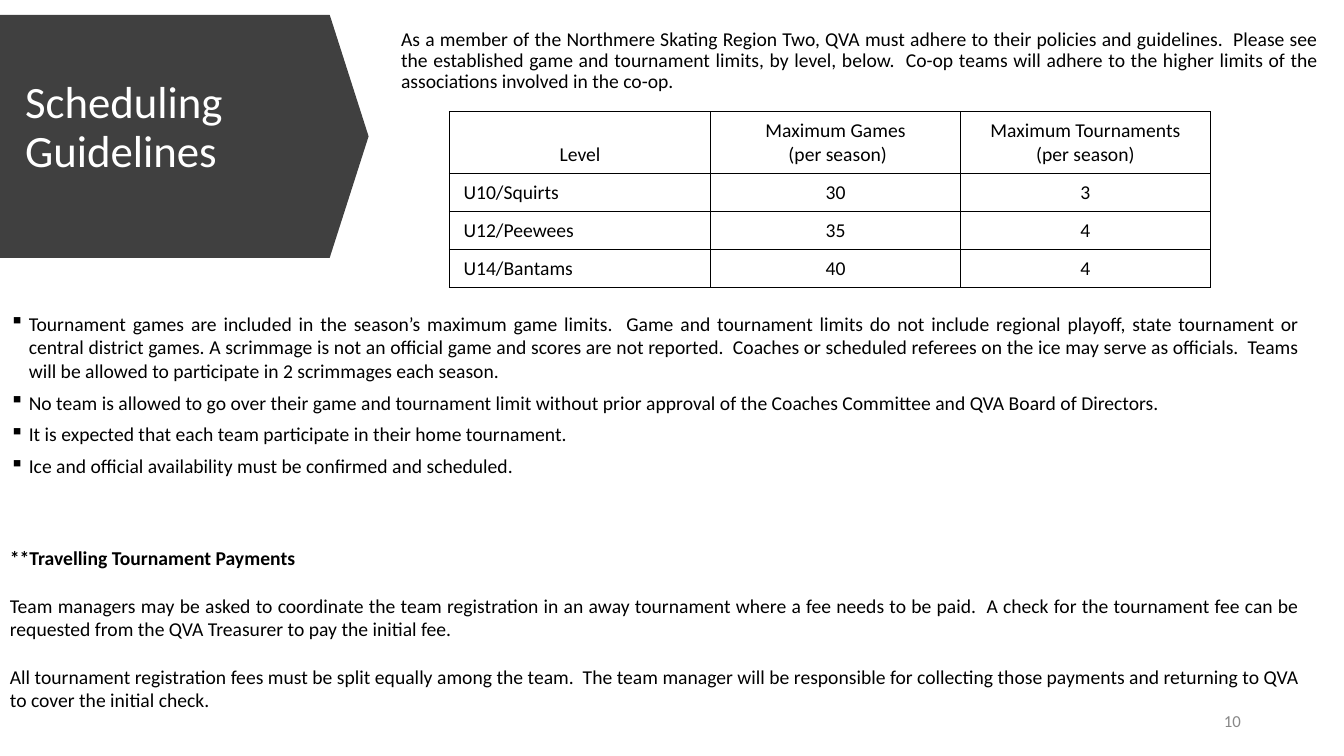
from dataclasses import dataclass

from lxml.etree import SubElement
from pptx import Presentation
from pptx.dml.color import RGBColor as Rgb
from pptx.enum.shapes import MSO_SHAPE as Form
from pptx.enum.text import MSO_ANCHOR as Anchor, MSO_AUTO_SIZE as Fit, PP_ALIGN as Align
from pptx.oxml import parse_xml
from pptx.oxml.ns import nsdecls, qn
from pptx.slide import Slide
from pptx.table import _Cell as Cell
from pptx.text.text import TextFrame, _Paragraph as Para
from pptx.util import Pt


@dataclass(frozen=True)
class Theme:
    font: str = "Calibri"
    dark: str = "404040"
    black: str = "000000"
    white: str = "FFFFFF"
    gray: str = "888888"
    title: float = 32
    body: float = 14
    small: float = 12
    rule: float = 1


THEME = Theme()


@dataclass(frozen=True)
class Line:
    text: str
    size: float = THEME.body
    color: str = THEME.black
    bold: bool = False
    align: Align = Align.JUSTIFY
    pitch: float | None = None
    before: float = 0
    after: float = 0
    bullet: str = ""


@dataclass(frozen=True)
class Box:
    left: float
    top: float
    width: float
    height: float
    lines: tuple[Line, ...]
    anchor: Anchor = Anchor.TOP
    fit: Fit = Fit.NONE


INDENT = 13.5
GAP = 17.1
POINTS = (
    "Tournament games are included in the season’s maximum game limits.  Game and "
    "tournament limits do not include regional playoff, state tournament or central "
    "district games. A scrimmage is not an official game and scores are not reported.  "
    "Coaches or scheduled referees on the ice may serve as officials.  Teams will be "
    "allowed to participate in 2 scrimmages each season.",
    "No team is allowed to go over their game and tournament limit without prior "
    "approval of the Coaches Committee and QVA Board of Directors.",
    "It is expected that each team participate in their home tournament.",
    "Ice and official availability must be confirmed and scheduled.",
)
BOXES = (
    Box(10.8, 21.6, 210.2, 140.4,
        (Line("Scheduling Guidelines", THEME.title, THEME.white,
              align=Align.LEFT, pitch=0.9),), Anchor.MIDDLE),
    Box(279.4, 17.3, 669.6, 79.9, (Line(
        "As a member of the Northmere Skating Region Two, QVA must adhere to their "
        "policies and guidelines.  Please see the established game and tournament "
        "limits, by level, below.  Co-op teams will adhere to the higher limits of the "
        "associations involved in the co-op.", pitch=0.9),)),
    Box(812.9, 500.4, 80.6, 28.8,
        (Line("10", THEME.small, THEME.gray, align=Align.RIGHT),), Anchor.MIDDLE),
    Box(0, 218.9, 936, 133.2,
        tuple(Line(text, after=6, bullet="▪") for text in POINTS), fit=Fit.SHAPE_TO_FIT_TEXT),
    Box(0, 386.6, 936, 126, (
        Line("**Travelling Tournament Payments", bold=True),
        Line("Team managers may be asked to coordinate the team registration in an away "
             "tournament where a fee needs to be paid.  A check for the tournament fee "
             "can be requested from the QVA Treasurer to pay the initial fee.", before=GAP),
        Line("All tournament registration fees must be split equally among the team.  "
             "The team manager will be responsible for collecting those payments and "
             "returning to QVA to cover the initial check.", before=GAP),
    ), fit=Fit.SHAPE_TO_FIT_TEXT),
)

LIMITS = (
    (("Level",), ("Maximum Games", " (per season)"), ("Maximum Tournaments (per season)",)),
    (("U10/Squirts",), ("30",), ("3",)),
    (("U12/Peewees",), ("35",), ("4",)),
    (("U14/Bantams",), ("40",), ("4",)),
)
WIDTHS = (186.5, 178.5, 178.5)
HEIGHTS = (44.3, 27.1, 27.1, 27.1)


def add_bullet(para: Para, mark: str) -> None:
    props = para._p.get_or_add_pPr()
    props.set("marL", str(Pt(INDENT)))
    props.set("indent", str(-Pt(INDENT)))
    tint = SubElement(props, qn("a:buClr"))
    SubElement(tint, qn("a:srgbClr"), val=THEME.black)
    SubElement(props, qn("a:buChar"), char=mark)


def write(frame: TextFrame, lines: tuple[Line, ...]) -> None:
    for spot, line in enumerate(lines):
        para = frame.add_paragraph() if spot else frame.paragraphs[0]
        para.alignment = line.align
        para.line_spacing = line.pitch
        para.space_before = Pt(line.before)
        para.space_after = Pt(line.after)
        if line.bullet:
            add_bullet(para, line.bullet)
        run = para.add_run()
        run.text = line.text
        font = run.font
        font.name, font.size, font.bold = THEME.font, Pt(line.size), line.bold
        font.color.rgb = Rgb.from_string(line.color)


def pad(part: TextFrame | Cell, side: float, edge: float) -> None:
    part.margin_left = part.margin_right = Pt(side)
    part.margin_top = part.margin_bottom = Pt(edge)


def add_box(slide: Slide, box: Box) -> None:
    place = (Pt(n) for n in (box.left, box.top, box.width, box.height))
    frame = slide.shapes.add_textbox(*place).text_frame
    frame.word_wrap = True
    frame.auto_size = box.fit
    frame.vertical_anchor = box.anchor
    pad(frame, 7.2, 3.6)
    write(frame, box.lines)


def add_arrow(slide: Slide) -> None:
    arrow = slide.shapes.add_shape(Form.DOWN_ARROW, Pt(44.8), Pt(-34.4), Pt(173.5), Pt(263.5))
    arrow.rotation = 270
    arrow.adjustments[0], arrow.adjustments[1] = 1, 0.16
    arrow.shadow.inherit = False
    arrow.fill.solid()
    arrow.fill.fore_color.rgb = Rgb.from_string(THEME.dark)
    arrow.line.fill.background()


def frame_cell(cell: Cell) -> None:
    """Draw a rule on all four sides of the cell."""
    props = cell._tc.get_or_add_tcPr()
    for spot, side in enumerate(("lnL", "lnR", "lnT", "lnB")):
        props.insert(spot, parse_xml(
            f'<a:{side} {nsdecls("a")} w="{Pt(THEME.rule)}"><a:solidFill>'
            f'<a:srgbClr val="{THEME.black}"/></a:solidFill></a:{side}>'))


def add_limits(slide: Slide) -> None:
    table = slide.shapes.add_table(len(HEIGHTS), len(WIDTHS), Pt(321.1), Pt(79.9),
                                   Pt(sum(WIDTHS)), Pt(sum(HEIGHTS))).table
    table.first_row = table.horz_banding = False
    for col, width in zip(table.columns, WIDTHS):
        col.width = Pt(width)
    for r, (row, height) in enumerate(zip(LIMITS, HEIGHTS)):
        table.rows[r].height = Pt(height)
        for c, texts in enumerate(row):
            cell = table.cell(r, c)
            cell.fill.solid()
            cell.fill.fore_color.rgb = Rgb.from_string(THEME.white)
            cell.vertical_anchor = Anchor.TOP if r else Anchor.BOTTOM
            pad(cell, 10, 5)
            align = Align.LEFT if r and not c else Align.CENTER
            write(cell.text_frame, tuple(Line(text, align=align) for text in texts))
            frame_cell(cell)


def main() -> None:
    deck = Presentation()
    deck.slide_width, deck.slide_height = Pt(960), Pt(540)
    slide = deck.slides.add_slide(deck.slide_layouts[6])
    add_arrow(slide)
    for box in BOXES[:3]:
        add_box(slide, box)
    add_limits(slide)
    for box in BOXES[3:]:
        add_box(slide, box)
    deck.save("out.pptx")


if __name__ == "__main__":
    main()
